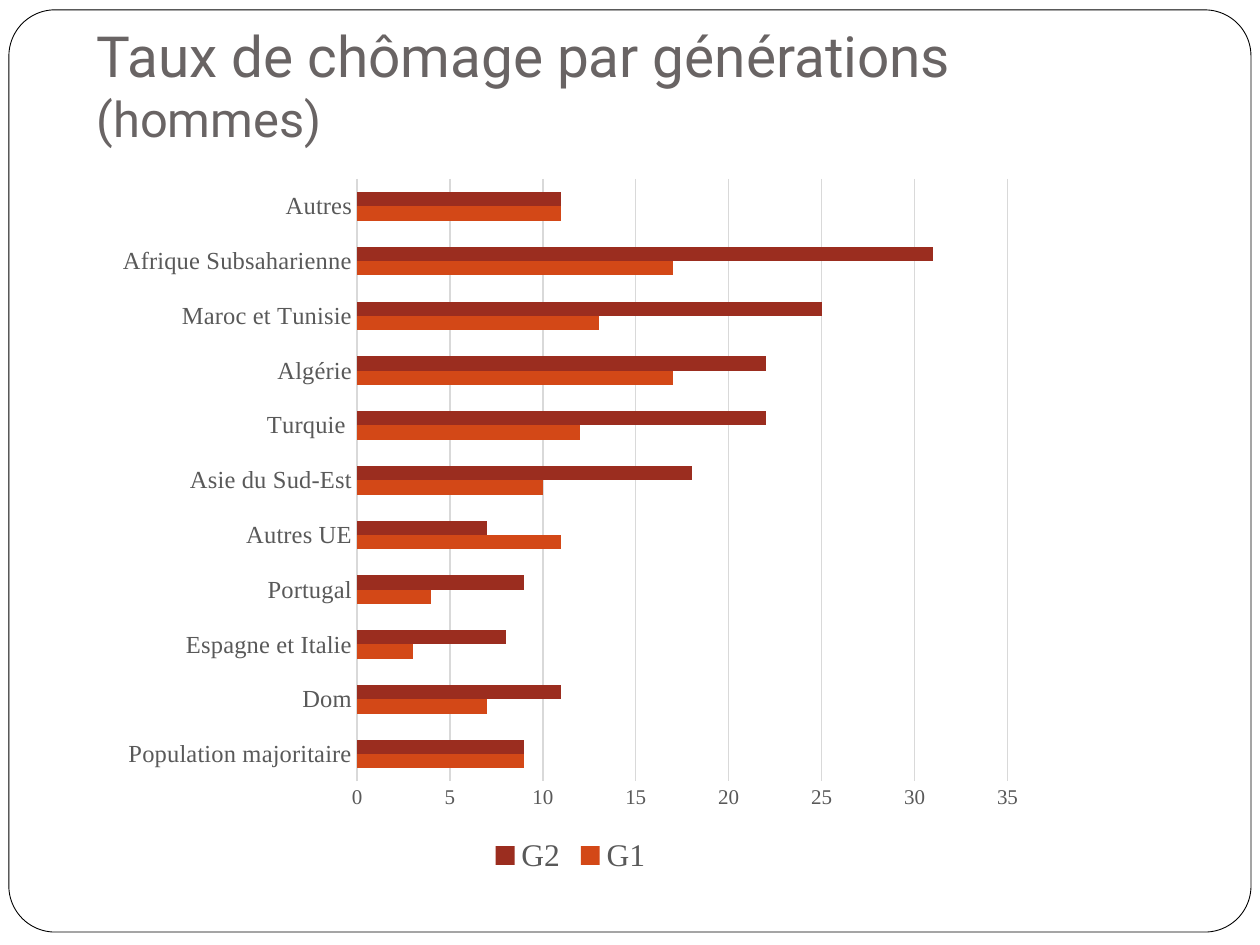
from pptx import Presentation
from pptx.chart.data import CategoryChartData
from pptx.dml.color import RGBColor
from pptx.enum.chart import XL_CHART_TYPE as ChartType
from pptx.enum.chart import XL_LEGEND_POSITION as LegendPosition
from pptx.enum.chart import XL_TICK_MARK as TickMark
from pptx.enum.shapes import MSO_SHAPE as ShapeType
from pptx.enum.text import MSO_ANCHOR as Anchor
from pptx.util import Cm, Pt

COLORS = {
    "white": "FFFFFF",
    "frame": "000000",
    "title": "696464",
    "label": "595959",
    "grid": "D9D9D9",
    "G1": "D34817",
    "G2": "9B2D1F",
}
CHART_FONT = "Times New Roman"

CATEGORIES = [
    "Population majoritaire", "Dom", "Espagne et Italie", "Portugal",
    "Autres UE", "Asie du Sud-Est", "Turquie ", "Algérie",
    "Maroc et Tunisie", "Afrique Subsaharienne", "Autres",
]
UNEMPLOYMENT = {
    "G1": [9, 7, 3, 4, 11, 10, 12, 17, 13, 17, 11],
    "G2": [9, 11, 8, 9, 7, 18, 22, 22, 25, 31, 11],
}


def rgb(name):
    return RGBColor.from_string(COLORS[name])


def format_font(font, size, color, name):
    font.size = Pt(size)
    font.name = name
    font.color.rgb = rgb(color)


def add_run(paragraph, text, size=18, color="title", name="Roboto"):
    run = paragraph.add_run()
    run.text = text
    format_font(run.font, size, color, name)


def format_line(line, color, width):
    line.color.rgb = rgb(color)
    line.width = Pt(width)


def add_frame(slide):
    shape = slide.shapes.add_shape(
        ShapeType.ROUNDED_RECTANGLE, Cm(0.18), Cm(0.2), Cm(25.04), Cm(18.59))
    shape.adjustments[0] = 0.05
    shape.shadow.inherit = False
    shape.fill.solid()
    shape.fill.fore_color.rgb = rgb("white")
    format_line(shape.line, "frame", 0.5)


def add_title(slide):
    shape = slide.shapes.add_textbox(Cm(1.7), Cm(1.77), Cm(21.23), Cm(1.45))
    frame = shape.text_frame
    frame.word_wrap = True
    frame.vertical_anchor = Anchor.BOTTOM
    frame.margin_bottom = Cm(0.25)
    paragraph = frame.paragraphs[0]
    add_run(paragraph, "Taux de chômage par générations ", size=32.4)
    add_run(paragraph, "(hommes)", size=27.9)


def format_axis(axis, size):
    axis.major_tick_mark = TickMark.NONE
    axis.minor_tick_mark = TickMark.NONE
    format_font(axis.tick_labels.font, size, "label", CHART_FONT)


def add_unemployment_chart(slide):
    data = CategoryChartData(number_format="General")
    data.categories = CATEGORIES
    for name, values in UNEMPLOYMENT.items():
        data.add_series(name, values)
    chart = slide.shapes.add_chart(
        ChartType.BAR_CLUSTERED, Cm(2.1), Cm(3.32), Cm(18.8), Cm(14.4),
        data).chart
    chart.has_title = False
    format_font(chart.font, 10, "frame", CHART_FONT)

    format_axis(chart.category_axis, 14)
    format_line(chart.category_axis.format.line, "grid", 0.75)

    value_axis = chart.value_axis
    format_axis(value_axis, 12)
    value_axis.minimum_scale = 0
    value_axis.maximum_scale = 35
    value_axis.major_unit = 5
    value_axis.format.line.fill.background()
    format_line(value_axis.major_gridlines.format.line, "grid", 0.75)

    chart.has_legend = True
    chart.legend.position = LegendPosition.BOTTOM
    chart.legend.include_in_layout = False
    format_font(chart.legend.font, 18, "label", CHART_FONT)

    plot = chart.plots[0]
    plot.vary_by_categories = False
    plot.gap_width = 182
    plot.overlap = 0
    for series in plot.series:
        series.invert_if_negative = False
        series.format.fill.solid()
        series.format.fill.fore_color.rgb = rgb(series.name)


def main():
    presentation = Presentation()
    presentation.slide_width = Cm(25.4)
    presentation.slide_height = Cm(19.05)
    slide = presentation.slides.add_slide(presentation.slide_layouts[6])
    add_frame(slide)
    add_title(slide)
    add_unemployment_chart(slide)
    presentation.save("out.pptx")


if __name__ == "__main__":
    main()
